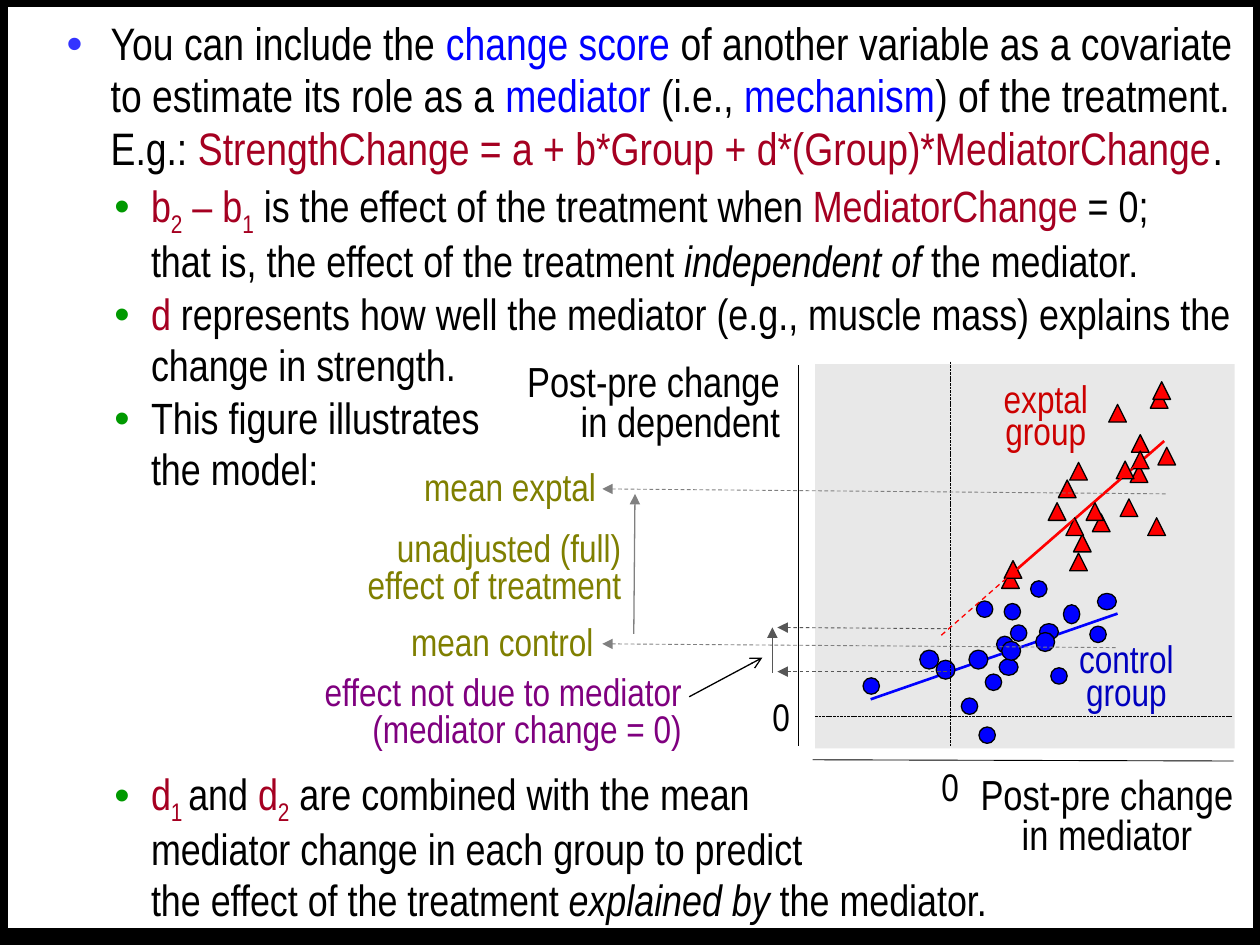
from lxml import etree
from pptx import Presentation
from pptx import util as u
from pptx.dml.color import RGBColor
from pptx.enum import dml, shapes, text
from pptx.oxml import ns

FONT = "Arial Narrow"
BLACK, BLUE, RED, CRIMSON = "000000", "0000FF", "FF0000", "A50021"
OLIVE, PURPLE, GREY, DARK_GREY = "7F7F00", "7F007F", "808080", "575757"
LEFT, CENTER, RIGHT = text.PP_ALIGN.LEFT, text.PP_ALIGN.CENTER, text.PP_ALIGN.RIGHT
DASH, DOTS = dml.MSO_LINE.DASH, dml.MSO_LINE.SQUARE_DOT

STYLES = {
    "plain": (BLACK, False, 0), "blue": (BLUE, False, 0), "red": (CRIMSON, False, 0),
    "sub": (CRIMSON, False, -25000), "italic": (BLACK, True, 0),
}
LEVELS = {1: (0.72, -0.35, 26, "3333FF"), 2: (1.04, -0.29, 25, "009900")}

BULLETS = [
    (1, 1.3, [("You can include the ", "plain"), ("change score", "blue"),
              (" of another variable as a covariate to estimate its role as a ", "plain"),
              ("mediator", "blue"), (" (i.e., ", "plain"), ("mechanism", "blue"),
              (") of the treatment.\nE.g.: ", "plain"),
              ("StrengthChange = a + b*Group + d*(Group)*MediatorChange", "red"),
              (".", "plain")]),
    (2, 1.3, [("b", "red"), ("2", "sub"), (" – b", "red"), ("1", "sub"),
              (" is the effect of the treatment when ", "plain"), ("MediatorChange ", "red"),
              ("= 0;\nthat is, the effect of the treatment ", "plain"),
              ("independent of", "italic"), (" the mediator.", "plain")]),
    (2, 1.3, [("d", "red"),
              (" represents how well the mediator (e.g., muscle mass) explains the "
               "change in strength.", "plain")]),
    (2, 1.3, [("This figure illustrates\nthe model:", "plain")]),
    (2, 155, [("d", "red"), ("1 ", "sub"), ("and ", "plain"), ("d", "red"), ("2", "sub"),
              (" are combined with the mean\nmediator change in each group to predict\n"
               "the effect of the treatment ", "plain"),
              ("explained by", "italic"), (" the mediator.", "plain")]),
]

CONTROL_POINTS = {
    (0.13, 0.13): [(8.34, 5.3), (8.02, 4.96), (6.85, 5.38), (7.77, 5.77), (7.91, 5.05),
                   (8.65, 4.97), (7.63, 5.54), (7.82, 5.35), (7.97, 4.79), (8.18, 4.61),
                   (7.75, 4.77)],
    (0.15, 0.13): [(8.25, 4.95), (7.93, 5.23), (8.71, 4.71)],
    (0.13, 0.15): [(8.44, 4.8)],
    (0.15, 0.15): [(7.43, 5.24), (7.95, 5.09), (8.22, 5.02), (7.69, 5.16), (7.3, 5.16)],
}
EXPTAL_POINTS = {
    (0.14, 0.14): [(9.11, 4.11), (8.89, 3.96), (8.4, 3.81), (8.98, 3.45), (7.95, 4.53),
                   (8.52, 4.24), (8.97, 3.69), (8.86, 3.66), (8.98, 3.58), (9.13, 3.1),
                   (9.15, 3.03), (9.19, 3.55), (8.32, 3.99), (8.49, 4.39), (8.67, 4.08),
                   (8.62, 3.99), (8.8, 3.21), (8.46, 4.11), (7.97, 4.45), (8.49, 3.67)],
}

AXES = [
    ((6.34, 2.9), (6.34, 5.92), BLACK, 0.5, None, {}),
    ((6.45, 6.03), (9.79, 6.04), BLACK, 0.5, None, {}),
    ((6.47, 5.69), (9.78, 5.69), BLACK, 0.5, DOTS, {}),
]
CONTROL_TREND = ((8.87, 4.87), (6.91, 5.55), BLUE, 1.5, None, {})
EXPTAL_TREND = ((9.24, 3.5), (8, 4.58), RED, 1.5, None, {})
GUIDES = [
    ((7.54, 2.87), (7.54, 5.93), BLACK, 0.5, DOTS, {}),
    ((6.13, 5.34), (6.13, 4.98), DARK_GREY, 0.75, None, {"tailEnd": "triangle"}),
    ((5.47, 5.53), (6.05, 5.22), BLACK, 0.75, None, {"tailEnd": "arrow"}),
    ((4.78, 3.88), (9.27, 3.92), GREY, 0.5, DASH, {"headEnd": "triangle"}),
    ((4.78, 5.11), (8.86, 5.14), GREY, 0.5, DASH, {"headEnd": "triangle"}),
    ((5.03, 5.03), (5.04, 3.92), GREY, 0.75, None, {"tailEnd": "triangle"}),
    ((6.17, 5.33), (7.54, 5.33), DARK_GREY, 0.5, DASH, {"headEnd": "triangle"}),
    ((6.17, 4.98), (7.53, 4.99), DARK_GREY, 0.5, DASH, {"headEnd": "triangle"}),
    ((9.12, 3.6), (7.45, 5.06), RED, 0.75, DASH, {}),
]

LABELS = [
    ("Post-pre change\vin dependent", (4.16, 2.89, 2.03, 0.65), RIGHT, 24, BLACK, 0.8),
    ("Post-pre change\vin mediator", (7.77, 6.17, 2.03, 0.65), CENTER, 24, BLACK, 0.8),
    ("0", (6.13, 5.54, 0.14, 0.33), RIGHT, 22, BLACK, 0.9),
    ("0", (7.47, 6.12, 0.14, 0.3), CENTER, 22, BLACK, 0.8),
    ("control\vgroup", (8.47, 5.14, 0.94, 0.52), CENTER, 22, "0000BF", 0.7),
    ("exptal\vgroup", (7.83, 3.07, 0.94, 0.52), CENTER, 22, "CC0000", 0.7),
    ("effect not due to mediator\v(mediator change = 0)", (2.55, 5.37, 2.86, 0.59),
     RIGHT, 22, PURPLE, 0.8),
    ("mean exptal", (3.36, 3.72, 1.37, 0.33), RIGHT, 22, OLIVE, 0.9),
    ("mean control", (3.25, 4.95, 1.46, 0.33), RIGHT, 22, OLIVE, 0.9),
    ("unadjusted (full)\veffect of treatment", (2.9, 4.23, 2.03, 0.59), RIGHT, 22, OLIVE, 0.8),
]


def color(value):
    return RGBColor.from_string(value)


def lengths(*inches):
    return [u.Cm(value * 2.54) for value in inches]


def add_block(slide, kind, box, fill, line_width=None):
    shape = slide.shapes.add_shape(kind, *lengths(*box))
    shape.shadow.inherit = False
    shape.fill.solid()
    shape.fill.fore_color.rgb = color(fill)
    if line_width is None:
        shape.line.fill.background()
    else:
        shape.line.color.rgb = color(BLACK)
        shape.line.width = u.Pt(line_width)
    return shape


def add_line(slide, start, end, stroke, width, dash, arrows):
    connector = slide.shapes.add_connector(
        shapes.MSO_CONNECTOR.STRAIGHT, *lengths(*start, *end))
    connector.line.color.rgb = color(stroke)
    connector.line.width = u.Pt(width)
    if dash:
        connector.line.dash_style = dash
    for end_name, arrow in arrows.items():
        etree.SubElement(connector.line._get_or_add_ln(), ns.qn("a:" + end_name), type=arrow)
    etree.SubElement(connector._element.spPr, ns.qn("a:effectLst"))


def add_points(slide, kind, groups, fill):
    for size, corners in groups.items():
        for corner in corners:
            add_block(slide, kind, corner + size, fill, 0)


def set_font(run, size, fill):
    run.font.name = FONT
    run.font.size = u.Pt(size)
    run.font.color.rgb = color(fill)


def set_frame(frame, margins, anchor, wrap):
    (frame.margin_left, frame.margin_top,
     frame.margin_right, frame.margin_bottom) = lengths(*margins)
    frame.vertical_anchor = anchor
    frame.word_wrap = wrap


def add_label(slide, wording, box, align, size, fill, spacing):
    frame = slide.shapes.add_textbox(*lengths(*box)).text_frame
    set_frame(frame, (0, 0, 0, 0), text.MSO_ANCHOR.MIDDLE, False)
    paragraph = frame.paragraphs[0]
    paragraph.text = wording
    paragraph.alignment = align
    paragraph.line_spacing = spacing
    for run in paragraph.runs:
        set_font(run, size, fill)


def fill_bullet(paragraph, level, before, pieces):
    margin, indent, size, bullet_color = LEVELS[level]
    paragraph.level = level - 1
    paragraph.alignment = LEFT
    paragraph.line_spacing = 0.97
    paragraph.space_before = u.Pt(before)
    properties = paragraph._p.get_or_add_pPr()
    for name, value in zip(("marL", "indent"), lengths(margin, indent)):
        properties.set(name, str(value))
    bullet = etree.SubElement(properties, ns.qn("a:buClr"))
    etree.SubElement(bullet, ns.qn("a:srgbClr"), val=bullet_color)
    etree.SubElement(properties, ns.qn("a:buFont"), typeface="Arial")
    etree.SubElement(properties, ns.qn("a:buChar"), char="•")
    for wording, style in pieces:
        fill, italic, baseline = STYLES[style]
        for index, line in enumerate(wording.split("\n")):
            if index:
                paragraph.add_line_break()
            run = paragraph.add_run()
            run.text = line
            set_font(run, size, fill)
            run.font.italic = italic
            if baseline:
                run._r.get_or_add_rPr().set("baseline", str(baseline))


def main():
    presentation = Presentation()
    presentation.slide_width, presentation.slide_height = lengths(10, 7.5)
    slide = presentation.slides.add_slide(presentation.slide_layouts[6])
    slide.background.fill.solid()
    slide.background.fill.fore_color.rgb = color(BLACK)

    rectangle = shapes.MSO_SHAPE.RECTANGLE
    frame = add_block(slide, rectangle, (0.06, 0.05, 9.89, 7.32), "FFFFFF", 0.75).text_frame
    set_frame(frame, (0.1, 0.09, 0.1, 0.05), text.MSO_ANCHOR.TOP, True)
    for index, bullet in enumerate(BULLETS):
        fill_bullet(frame.add_paragraph() if index else frame.paragraphs[0], *bullet)

    add_block(slide, rectangle, (6.47, 2.89, 3.33, 3.05), "E8E8E8")
    for line in AXES + [CONTROL_TREND]:
        add_line(slide, *line)
    add_points(slide, shapes.MSO_SHAPE.OVAL, CONTROL_POINTS, BLUE)
    add_line(slide, *EXPTAL_TREND)
    add_points(slide, shapes.MSO_SHAPE.ISOSCELES_TRIANGLE, EXPTAL_POINTS, RED)
    for label in LABELS:
        add_label(slide, *label)
    for line in GUIDES:
        add_line(slide, *line)
    presentation.save("out.pptx")


if __name__ == "__main__":
    main()
